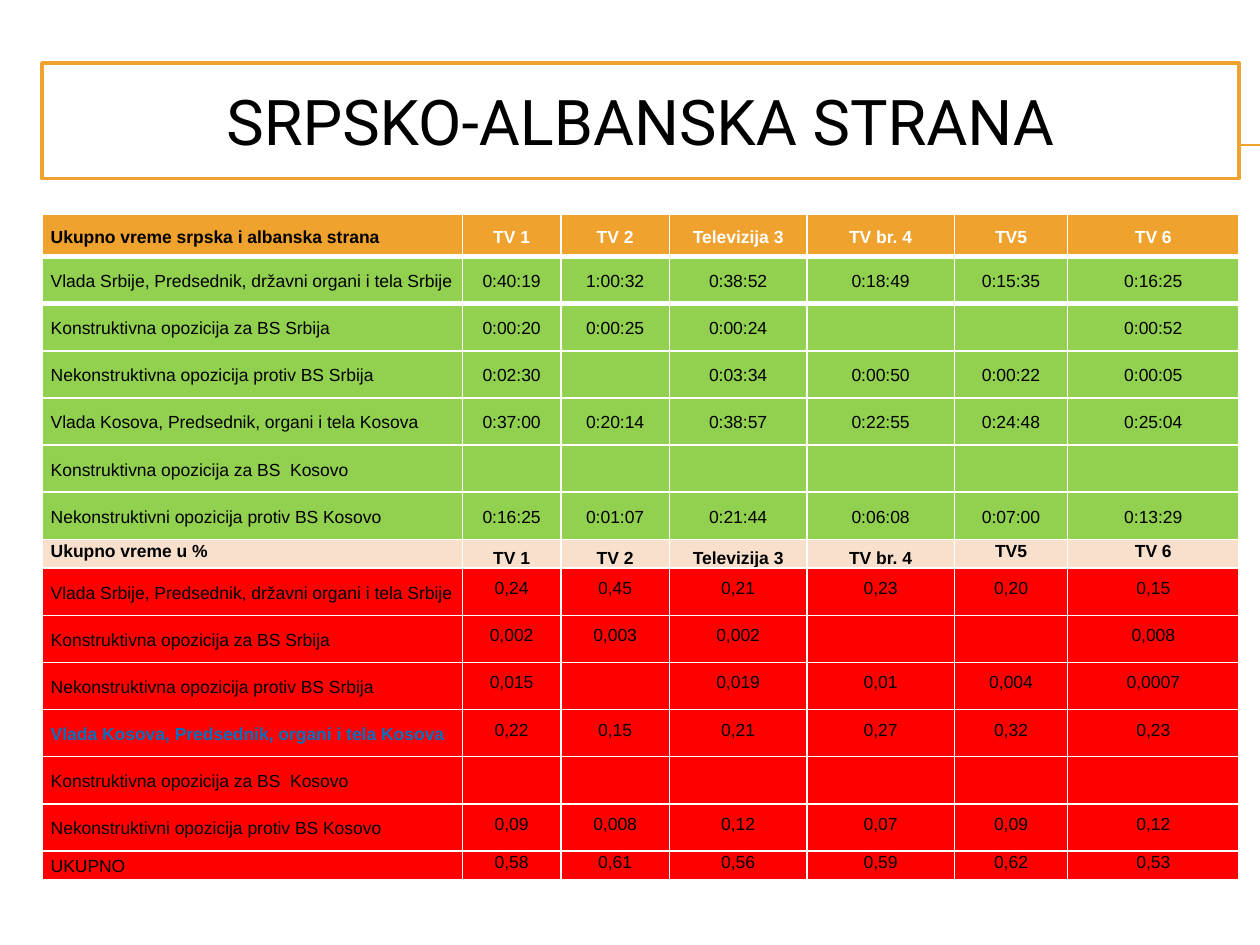
"""Build the slide comparing airtime of the Serbian and Albanian sides."""
from lxml.etree import SubElement
from pptx import Presentation
from pptx.dml.color import RGBColor
from pptx.enum.shapes import MSO_CONNECTOR as Connector, MSO_SHAPE as Shape
from pptx.enum.text import MSO_ANCHOR as Anchor, PP_ALIGN as Align
from pptx.oxml.ns import qn
from pptx.util import Pt

ORANGE = RGBColor(0xF0, 0xA2, 0x2E)
GREEN = RGBColor(0x92, 0xD0, 0x50)
PEACH = RGBColor(0xF9, 0xE0, 0xCD)
RED = RGBColor(0xFF, 0x00, 0x00)
BLUE = RGBColor(0x00, 0x70, 0xC0)
BLACK = RGBColor(0x00, 0x00, 0x00)
WHITE = RGBColor(0xFF, 0xFF, 0xFF)

STATIONS = ["TV 1", "TV 2", "Televizija 3", "TV br. 4", "TV5", "TV 6"]
GROUPS = [
    "Vlada Srbije, Predsednik, državni organi i tela Srbije",
    "Konstruktivna opozicija za BS Srbija",
    "Nekonstruktivna opozicija protiv BS Srbija",
    "Vlada Kosova, Predsednik, organi i tela Kosova",
    "Konstruktivna opozicija za BS  Kosovo",
    "Nekonstruktivni opozicija protiv BS Kosovo",
]
TIMES = [
    ["0:40:19", "1:00:32", "0:38:52", "0:18:49", "0:15:35", "0:16:25"],
    ["0:00:20", "0:00:25", "0:00:24", "", "", "0:00:52"],
    ["0:02:30", "", "0:03:34", "0:00:50", "0:00:22", "0:00:05"],
    ["0:37:00", "0:20:14", "0:38:57", "0:22:55", "0:24:48", "0:25:04"],
    [""] * 6,
    ["0:16:25", "0:01:07", "0:21:44", "0:06:08", "0:07:00", "0:13:29"],
]
SHARES = [
    ["0,24", "0,45", "0,21", "0,23", "0,20", "0,15"],
    ["0,002", "0,003", "0,002", "", "", "0,008"],
    ["0,015", "", "0,019", "0,01", "0,004", "0,0007"],
    ["0,22", "0,15", "0,21", "0,27", "0,32", "0,23"],
    [""] * 6,
    ["0,09", "0,008", "0,12", "0,07", "0,09", "0,12"],
]
TOTALS = ["0,58", "0,61", "0,56", "0,59", "0,62", "0,53"]

COLUMN_WIDTHS = [240.2, 56.3, 62, 78.6, 84.3, 64.8, 97.8]
HEADER_HEIGHT, ROW_HEIGHT, SHORT_HEIGHT = 24, 26.95, 16.5
HEADER_BORDERS = {0: "a:lnB", 1: "a:lnT"}
SHARE_HEADER_ROW = 7
BLUE_ROW = 11

rows = [(ORANGE, HEADER_HEIGHT, ["Ukupno vreme srpska i albanska strana", *STATIONS])]
rows += [(GREEN, ROW_HEIGHT, [group, *times]) for group, times in zip(GROUPS, TIMES)]
rows += [(PEACH, SHORT_HEIGHT, ["Ukupno vreme u %", *STATIONS])]
rows += [(RED, ROW_HEIGHT, [group, *shares]) for group, shares in zip(GROUPS, SHARES)]
rows += [(RED, SHORT_HEIGHT, ["UKUPNO", *TOTALS])]

presentation = Presentation()
presentation.slide_width = Pt(720)
presentation.slide_height = Pt(540)
slide = presentation.slides.add_slide(presentation.slide_layouts[6])

for y in (82.9, 83.3):
    rule = slide.shapes.add_connector(Connector.STRAIGHT, Pt(40.3), Pt(y), Pt(720), Pt(y))
    rule.line.color.rgb = ORANGE
    rule.line.width = Pt(0.75)
    SubElement(rule._element.spPr, qn("a:effectLst"))

title = slide.shapes.add_shape(Shape.RECTANGLE, Pt(24), Pt(36), Pt(684), Pt(66))
title.shadow.inherit = False
title.fill.solid()
title.fill.fore_color.rgb = WHITE
title.line.color.rgb = ORANGE
title.line.width = Pt(2)
title.text_frame.word_wrap = True
title.text_frame.vertical_anchor = Anchor.MIDDLE
paragraph = title.text_frame.paragraphs[0]
paragraph.text = "SRPSKO-ALBANSKA STRANA"
paragraph.alignment = Align.CENTER
paragraph.font.name = "Roboto"
paragraph.font.size = Pt(36)
paragraph.font.color.rgb = BLACK

table_height = sum(height for _, height, _ in rows)
table = slide.shapes.add_table(
    len(rows), len(COLUMN_WIDTHS), Pt(24), Pt(122.6), Pt(684), Pt(table_height)
).table
table.horz_banding = False
for column, width in zip(table.columns, COLUMN_WIDTHS):
    column.width = Pt(width)

for row_index, (fill_color, height, texts) in enumerate(rows):
    table.rows[row_index].height = Pt(height)
    for column_index, text in enumerate(texts):
        is_label = column_index == 0
        is_blue = is_label and row_index == BLUE_ROW
        cell = table.cell(row_index, column_index)
        if row_index in HEADER_BORDERS:
            properties = cell._tc.get_or_add_tcPr()
            border = SubElement(properties, qn(HEADER_BORDERS[row_index]), w=str(Pt(3)))
            border_fill = SubElement(border, qn("a:solidFill"))
            SubElement(border_fill, qn("a:srgbClr"), val=str(WHITE))
        cell.fill.solid()
        cell.fill.fore_color.rgb = fill_color
        cell.margin_left = cell.margin_right = Pt(5)
        cell.margin_top = cell.margin_bottom = Pt(0)
        cell.vertical_anchor = Anchor.MIDDLE
        if row_index == SHARE_HEADER_ROW:
            cell.vertical_anchor = Anchor.BOTTOM if 1 <= column_index <= 4 else Anchor.TOP
        if not text:
            continue
        paragraph = cell.text_frame.paragraphs[0]
        paragraph.text = text
        paragraph.alignment = Align.LEFT if is_label else Align.CENTER
        paragraph.line_spacing = 0.5 if fill_color == RED and not is_label else 1.15
        paragraph.font.name = "Arial"
        paragraph.font.size = Pt(10)
        paragraph.font.bold = fill_color in (ORANGE, PEACH) or is_blue
        paragraph.font.color.rgb = BLACK
        if is_blue:
            paragraph.font.color.rgb = BLUE
        elif fill_color == ORANGE and not is_label:
            paragraph.font.color.rgb = WHITE

presentation.save("out.pptx")
